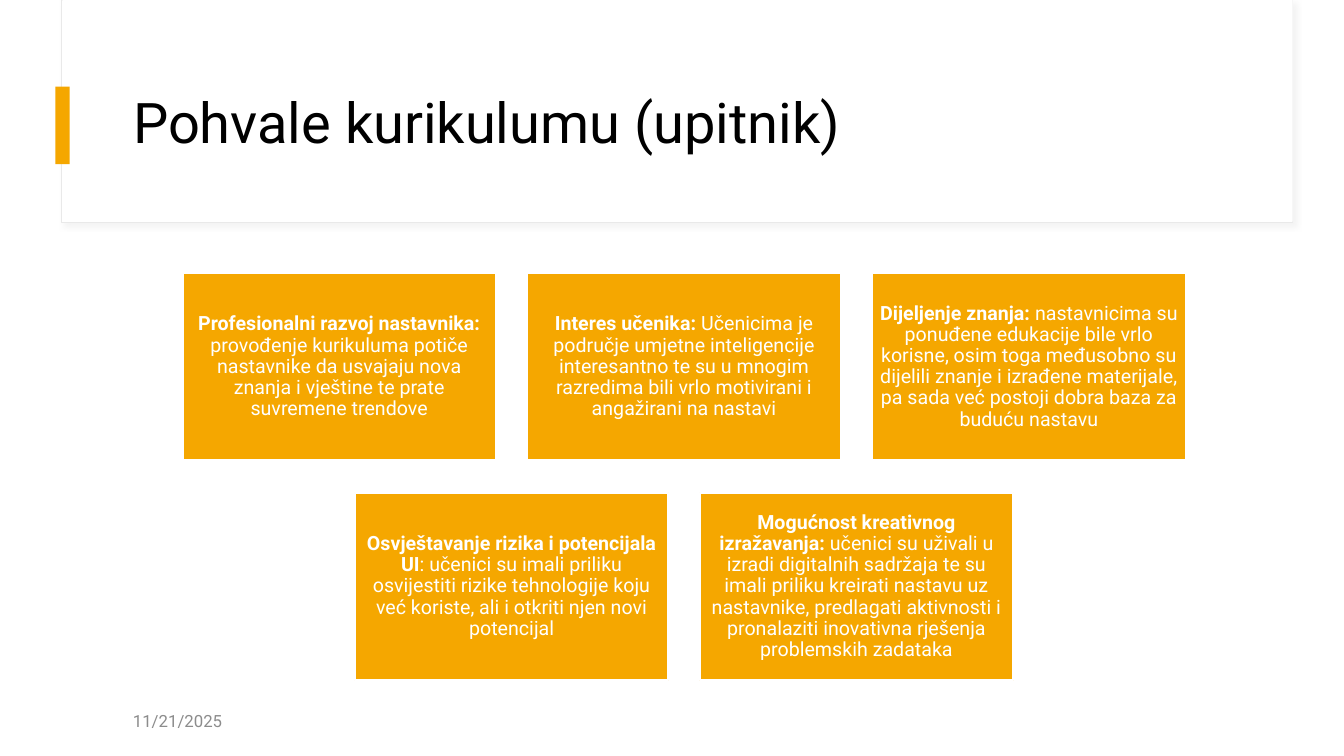
from dataclasses import dataclass
from typing import Optional

from lxml import etree
from pptx import Presentation
from pptx.dml.color import RGBColor
from pptx.enum.shapes import MSO_SHAPE
from pptx.enum.text import MSO_ANCHOR, MSO_AUTO_SIZE, PP_ALIGN
from pptx.oxml import parse_xml
from pptx.util import Emu, Pt

RECT = MSO_SHAPE.RECTANGLE
MIDDLE = MSO_ANCHOR.MIDDLE
NO_FIT = MSO_AUTO_SIZE.NONE
LEFT, CENTER = PP_ALIGN.LEFT, PP_ALIGN.CENTER

FONT = "Roboto"
WHITE, BLACK, AMBER = "FFFFFF", "000000", "F5A700"
PALE, GREY = "E9E9E9", "8C8C8C"
TITLE_ONLY = 5

CARD_W, CARD_H = 311, 186
GAP_X, GAP_Y = 31, 32
CARDS_CENTER, CARDS_TOP = 678, 271

SHADOW = """<a:effectLst xmlns:a="http://schemas.openxmlformats.org/drawingml/2006/main">
  <a:outerShdw blurRad="50800" dist="38100" dir="2700000" algn="tl" rotWithShape="0">
    <a:srgbClr val="D9D9D9"><a:alpha val="30000"/></a:srgbClr>
  </a:outerShdw>
</a:effectLst>"""


@dataclass(frozen=True)
class Box:
    left: int
    top: int
    width: int
    height: int
    fill: str = WHITE
    line: Optional[str] = None
    line_pt: float = 0.75


@dataclass(frozen=True)
class Card:
    lead: str
    body: str


HEADER_FRAME = Box(61, 0, 1221, 221, line=PALE)
HEADER_FILL = Box(62, 0, 1220, 220)
ACCENT_BAR = Box(55, 86, 14, 77, fill=AMBER)
TITLE_BOX = Box(122, 60, 1112, 129)
DATE_BOX = Box(122, 695, 300, 40)

CARD_ROWS = [
    [
        Card("Profesionalni razvoj nastavnika: ",
             "provođenje kurikuluma potiče nastavnike da usvajaju nova znanja "
             "i vještine te prate suvremene trendove"),
        Card("Interes učenika: ",
             "Učenicima je područje umjetne inteligencije interesantno te su "
             "u mnogim razredima bili vrlo motivirani i angažirani na nastavi"),
        Card("Dijeljenje znanja:",
             " nastavnicima su ponuđene edukacije bile vrlo korisne, osim toga "
             "međusobno su dijelili znanje i izrađene materijale, pa sada već "
             "postoji dobra baza za buduću nastavu"),
    ],
    [
        Card("Osvještavanje rizika i potencijala UI",
             ": učenici su imali priliku osvijestiti rizike tehnologije koju "
             "već koriste, ali i otkriti njen novi potencijal"),
        Card("Mogućnost kreativnog izražavanja:",
             " učenici su uživali u izradi digitalnih sadržaja te su imali "
             "priliku kreirati nastavu uz nastavnike, predlagati aktivnosti i "
             "pronalaziti inovativna rješenja problemskih zadataka"),
    ],
]


def px(n: int) -> Emu:
    """Convert px, 100 to the inch, into EMU."""
    return Emu(n * 9144)


def rgb(value: str) -> RGBColor:
    return RGBColor.from_string(value)


def set_attrs(obj, values: dict) -> None:
    for name, value in values.items():
        setattr(obj, name, value)


def place(box: Box) -> tuple:
    return px(box.left), px(box.top), px(box.width), px(box.height)


def add_box(slide, box: Box):
    sp = slide.shapes.add_shape(RECT, *place(box))
    sp.shadow.inherit = False
    sp.fill.solid()
    sp.fill.fore_color.rgb = rgb(box.fill)
    if box.line:
        sp.line.color.rgb = rgb(box.line)
        sp.line.width = Pt(box.line_pt)
    else:
        sp.line.fill.background()
    return sp


def add_shadow(sp) -> None:
    plain = sp.element.spPr.find("{*}effectLst")
    plain.getparent().replace(plain, parse_xml(etree.tostring(etree.fromstring(SHADOW))))


def write(sp, runs: list, size: int, color: str, align=LEFT, spacing: float = 1.0,
          inset: Optional[int] = None) -> None:
    """Fill a shape with one paragraph of (text, bold) runs."""
    tf = sp.text_frame
    set_attrs(tf, {"word_wrap": True, "auto_size": NO_FIT, "vertical_anchor": MIDDLE})
    if inset is not None:
        sides = ("left", "top", "right", "bottom")
        set_attrs(tf, {f"margin_{side}": px(inset) for side in sides})
    p = tf.paragraphs[0]
    set_attrs(p, {"alignment": align, "line_spacing": spacing})
    for text, bold in runs:
        r = p.add_run()
        r.text = text
        set_attrs(r.font, {"name": FONT, "size": Pt(size), "bold": bold})
        r.font.color.rgb = rgb(color)


def add_header(slide) -> None:
    add_shadow(add_box(slide, HEADER_FRAME))
    for box in (HEADER_FILL, ACCENT_BAR):
        add_box(slide, box)
    title = slide.shapes.title
    title.element.getparent().append(title.element)
    set_attrs(title, dict(zip(("left", "top", "width", "height"), place(TITLE_BOX))))
    write(title, [("Pohvale kurikulumu (upitnik)", False)], 40, BLACK, spacing=0.9)


def add_cards(slide) -> None:
    """Draw each row of cards centred on the same axis."""
    for i, row in enumerate(CARD_ROWS):
        row_w = len(row) * (CARD_W + GAP_X) - GAP_X
        left = CARDS_CENTER - row_w // 2
        top = CARDS_TOP + i * (CARD_H + GAP_Y)
        for j, card in enumerate(row):
            box = Box(left + j * (CARD_W + GAP_X), top, CARD_W, CARD_H, AMBER, WHITE, 1.5)
            write(add_box(slide, box), [(card.lead, True), (card.body, False)],
                  14, WHITE, CENTER, 0.9, inset=6)


def main() -> None:
    prs = Presentation()
    set_attrs(prs, {"slide_width": px(1333), "slide_height": px(750)})
    slide = prs.slides.add_slide(prs.slide_layouts[TITLE_ONLY])
    add_header(slide)
    date = slide.shapes.add_textbox(*place(DATE_BOX))
    write(date, [("11/21/2025", False)], 12, GREY)
    add_cards(slide)
    prs.save("out.pptx")


if __name__ == "__main__":
    main()
